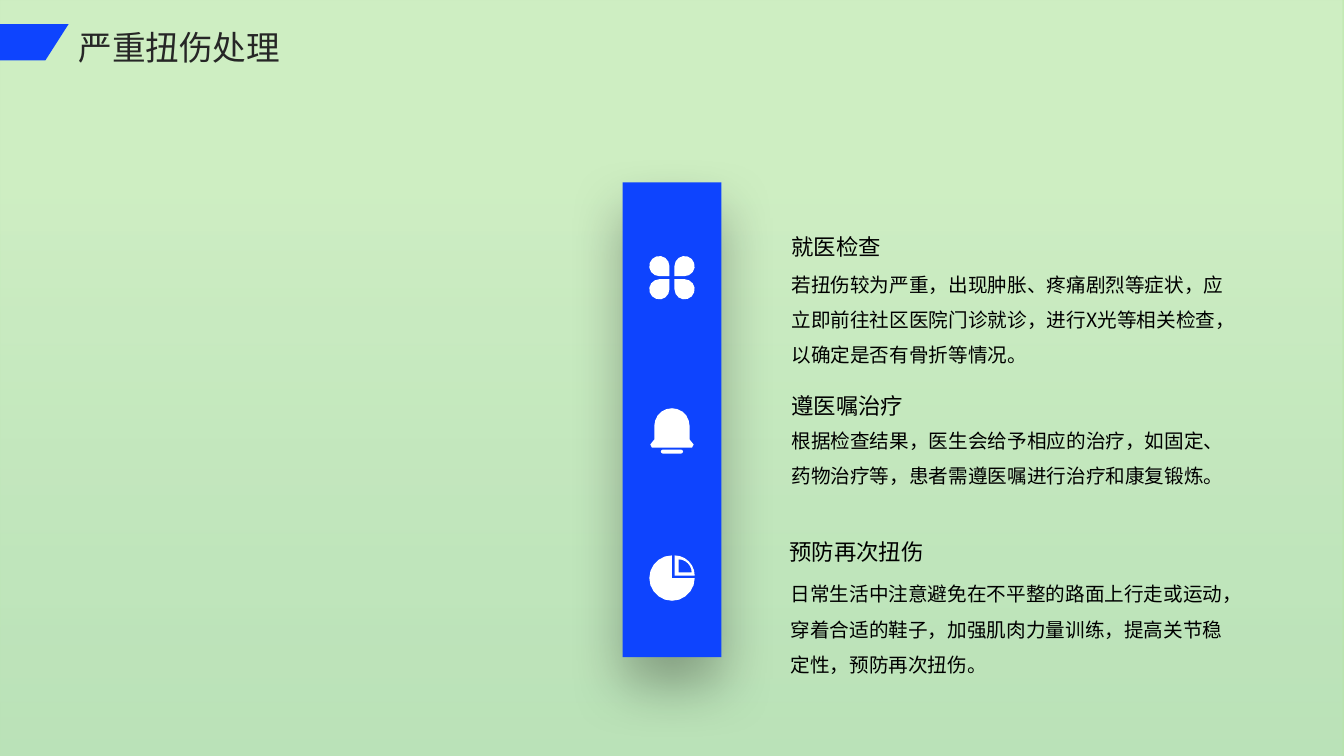
import math

import pptx
import pptx.dml.color
import pptx.enum.shapes
import pptx.enum.text
import pptx.oxml
import pptx.oxml.ns
import pptx.util

RGB = pptx.dml.color.RGBColor
BLUE, WHITE, BLACK = RGB(0x0E, 0x44, 0xFE), RGB(255, 255, 255), RGB(0, 0, 0)
GREEN, GREY = RGB(0xB4, 0xE5, 0xA2), RGB(0x26, 0x26, 0x26)
MIST = RGB(0xCF, 0xDA, 0xFF)
FONT = "Noto Sans CJK SC"
NS = 'xmlns:a="http://schemas.openxmlformats.org/drawingml/2006/main"'

# Content
TITLE = "严重扭伤处理"
# heading, heading left and top, body, body left and top
ADVICE = [
    ("就医检查", (7.85, 2.31),
     "若扭伤较为严重，出现肿胀、疼痛剧烈等症状，应立即前往社区医院门诊就诊，进行X光等相关检查，以确定是否有骨折等情况。",
     (7.85, 2.59)),
    ("遵医嘱治疗", (7.85, 3.89),
     "根据检查结果，医生会给予相应的治疗，如固定、药物治疗等，患者需遵医嘱进行治疗和康复锻炼。",
     (7.85, 4.14)),
    ("预防再次扭伤", (7.83, 5.34),
     "日常生活中注意避免在不平整的路面上行走或运动，穿着合适的鞋子，加强肌肉力量训练，提高关节稳定性，预防再次扭伤。",
     (7.84, 5.66)),
]

# Layout
WIDTH, HEIGHT = 13.33, 7.5
MIDDLE = WIDTH / 2
BAR_W, BAR_H, BAR_TOP = 0.98, 4.71, 1.81
TEXT_RIGHT = 12.21
UNITS = 1000  # freeform units per inch

prs = pptx.Presentation()
prs.slide_width = pptx.util.Inches(WIDTH)
prs.slide_height = pptx.util.Inches(HEIGHT)
s = prs.slides.add_slide(prs.slide_layouts[6])
s.background.fill.solid()
s.background.fill.fore_color.rgb = GREEN


def paint(sp, color):
    sp.shadow.inherit = False
    sp.fill.solid()
    sp.fill.fore_color.rgb = color
    sp.line.fill.background()


def add_rect(x, y, w, h, color):
    sp = s.shapes.add_shape(pptx.enum.shapes.MSO_SHAPE.RECTANGLE,
                            *map(pptx.util.Inches, (x, y, w, h)))
    paint(sp, color)
    return sp


def add_outline(contours, color):
    """Draw closed contours, given in inches, as one filled shape."""
    scaled = [[(x * UNITS, y * UNITS) for x, y in points] for points in contours]
    fb = s.shapes.build_freeform(*scaled[0][0], scale=pptx.util.Inches(1) / UNITS)
    for i, points in enumerate(scaled):
        if i:
            fb.move_to(*points[0])
        fb.add_line_segments(points[1:], close=True)
    paint(fb.convert_to_shape(), color)


def arc(cx, cy, radius, start, end, steps=10):
    """Points on an arc; degrees run clockwise from the right."""
    angles = [math.radians(start + (end - start) * i / steps) for i in range(steps + 1)]
    return [(cx + radius * math.cos(a), cy + radius * math.sin(a)) for a in angles]


def add_text(text, x, y, w, h, size, color=BLACK, spacing=None, inset=True, grow=False):
    tf = s.shapes.add_textbox(*map(pptx.util.Inches, (x, y, w, h))).text_frame
    tf.word_wrap = True
    if grow:
        tf.auto_size = pptx.enum.text.MSO_AUTO_SIZE.SHAPE_TO_FIT_TEXT
    if not inset:
        tf.margin_left = tf.margin_top = tf.margin_right = tf.margin_bottom = 0
    p = tf.paragraphs[0]
    if spacing:
        p.line_spacing = spacing
    r = p.add_run()
    r.text = text
    r.font.size = pptx.util.Pt(size)
    r.font.color.rgb = color
    r.font.name = FONT
    rpr = r.font._element
    rpr.set("lang", "zh-CN")
    rpr.append(pptx.oxml.parse_xml(f'<a:ea {NS} typeface="{FONT}"/>'))


# Translucent gradient over the background
veil = add_rect(0, 0, WIDTH, HEIGHT, WHITE)
stops = "".join(
    f'<a:gs pos="{pos}000"><a:srgbClr val="{color}"><a:alpha val="{alpha}000"/></a:srgbClr></a:gs>'
    for pos, color, alpha in [(0, MIST, 23), (76, WHITE, 35), (100, WHITE, 35)])
solid = veil._element.spPr.find(pptx.oxml.ns.qn("a:solidFill"))
solid.getparent().replace(solid, pptx.oxml.parse_xml(
    f'<a:gradFill {NS} rotWithShape="1"><a:gsLst>{stops}</a:gsLst>'
    '<a:lin ang="16200000" scaled="0"/></a:gradFill>'))

# Blue bar with a soft shadow below
bar = add_rect(MIDDLE - BAR_W / 2, BAR_TOP, BAR_W, BAR_H, BLUE)
bar._element.spPr.find(pptx.oxml.ns.qn("a:effectLst")).append(pptx.oxml.parse_xml(
    f'<a:outerShdw {NS} blurRad="{pptx.util.Pt(40)}" dist="{pptx.util.Pt(20)}" dir="5400000" '
    'algn="t" rotWithShape="0"><a:srgbClr val="000000"><a:alpha val="30000"/>'
    '</a:srgbClr></a:outerShdw>'))

# Clover icon: four petals, each with its square corner towards the centre
petals = []
for dx, dy, corner in [(-1, -1, 45), (1, -1, 135), (1, 1, 225), (-1, 1, 315)]:
    cx, cy = MIDDLE + dx * 0.125, 2.755 + dy * 0.115
    petals.append(arc(cx, cy, 0.1, corner + 45, corner + 315) + [(cx - dx * 0.1, cy - dy * 0.1)])
add_outline(petals, WHITE)

# Bell icon: dome with a flared rim, and a clapper
rim = [(0.175, 4.36), (0.215, 4.41), (0.2, 4.44)]
dome = (arc(MIDDLE, 4.225, 0.175, 180, 360)
        + [(MIDDLE + dx, y) for dx, y in rim]
        + [(MIDDLE - dx, y) for dx, y in reversed(rim)])
clapper = (arc(MIDDLE - 0.09, 4.48, 0.02, 90, 270, steps=4)
           + arc(MIDDLE + 0.09, 4.48, 0.02, -90, 90, steps=4))
add_outline([dome, clapper], WHITE)

# Pie icon: three quarters, and a hollow quarter set apart
pie = arc(MIDDLE, 5.735, 0.225, 0, 270, steps=15) + [(MIDDLE, 5.735)]
wedge = arc(6.69, 5.71, 0.2, 270, 360, steps=6) + [(6.69, 5.71)]
hollow = [(6.73, 5.68)] + arc(6.73, 5.68, 0.13, 360, 270, steps=6)
add_outline([pie, wedge, hollow], WHITE)

# Advice beside the bar
for heading, (hx, hy), body, (bx, by) in ADVICE:
    add_text(heading, hx, hy, TEXT_RIGHT - hx, 0.27, 16, inset=False)
    add_text(body, bx, by, TEXT_RIGHT - bx, 1.06, 14, spacing=1.5, inset=False)

# Title with its slanted tab
add_outline([[(0, 0.24), (0.68, 0.24), (0.45, 0.6), (0, 0.6)]], BLUE)
add_text(TITLE, 0.68, 0.18, 11.71, 0.46, 24, color=GREY, spacing=1.1, grow=True)

prs.save("out.pptx")
